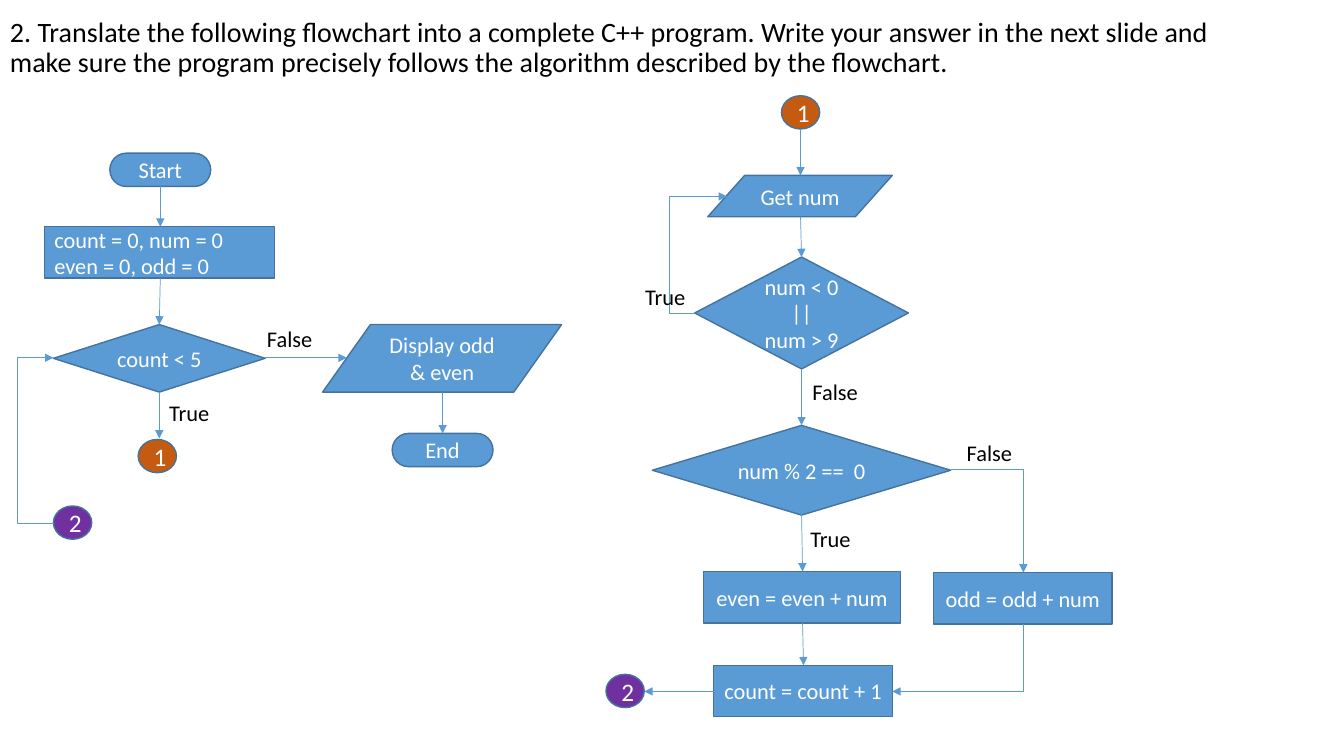
import dataclasses
import typing

import pptx
import pptx.dml.color
import pptx.enum.shapes
import pptx.enum.text
import pptx.oxml
import pptx.oxml.ns
import pptx.util

SHAPE = pptx.enum.shapes.MSO_SHAPE
CONNECTOR = pptx.enum.shapes.MSO_CONNECTOR
ALIGN = pptx.enum.text.PP_ALIGN
ANCHOR = pptx.enum.text.MSO_ANCHOR

SLIDE_WIDTH = pptx.util.Inches(13.33)
SLIDE_HEIGHT = pptx.util.Inches(7.5)
COLUMNS = 133.3
ROWS = 75
FONT = "Calibri"
COLORS = {
    "step": "5B9BD5",
    "outline": "43739E",
    "arrow": "5B9BD5",
    "orange": "C55A11",
    "purple": "7030A0",
    "black": "000000",
    "white": "FFFFFF",
}


@dataclasses.dataclass(frozen=True)
class Node:
    kind: SHAPE
    column: float
    row: float
    columns: float
    rows: float
    text: str
    fill: str = "step"
    size: float = 16
    align: ALIGN = ALIGN.CENTER


class Arrow(typing.NamedTuple):
    start: tuple[float, float]
    end: tuple[float, float]


class Elbow(typing.NamedTuple):
    start: tuple[float, float]
    end: tuple[float, float]
    turn: float | None = None


class Label(typing.NamedTuple):
    column: float
    row: float
    text: str


def circle(column: float, row: float, text: str, fill: str) -> Node:
    return Node(SHAPE.OVAL, column, row, 3.8, 3.3, text, fill, 18)


NODES = [
    Node(SHAPE.FLOWCHART_TERMINATOR, 10.9, 15.2, 10, 3.3, "Start"),
    Node(SHAPE.FLOWCHART_PROCESS, 4.4, 22.5, 22.8, 5.1,
         "count = 0, num = 0\neven = 0, odd = 0", align=ALIGN.LEFT),
    Node(SHAPE.FLOWCHART_DECISION, 5.3, 32.2, 21, 6.7, "count < 5"),
    Node(SHAPE.FLOWCHART_DATA, 32, 32.2, 23.7, 6.7, "Display odd & even"),
    Node(SHAPE.FLOWCHART_TERMINATOR, 38.9, 43, 10, 3.3, "End"),
    Node(SHAPE.FLOWCHART_DATA, 70.2, 17.4, 18.3, 4.1, "Get num"),
    Node(SHAPE.FLOWCHART_DECISION, 68.9, 25.5, 21.2, 11.1, "num < 0\n||\nnum > 9"),
    Node(SHAPE.FLOWCHART_DECISION, 64.7, 42.2, 29.6, 8.9, "num % 2 ==  0"),
    Node(SHAPE.FLOWCHART_PROCESS, 69.8, 56.7, 19.5, 5.1, "even = even + num"),
    Node(SHAPE.FLOWCHART_PROCESS, 92.6, 56.8, 17.7, 5.1, "odd = odd + num"),
    Node(SHAPE.FLOWCHART_PROCESS, 70.8, 66, 17.7, 5.1, "count = count + 1"),
    circle(77.5, 9.5, "1", "orange"),
    circle(13.7, 43.6, "1", "orange"),
    circle(5.3, 50.2, "2", "purple"),
    circle(60.1, 66.9, "2", "purple"),
]

ARROWS = [
    Arrow((15.9, 18.5), (15.9, 22.5)),
    Arrow((15.9, 27.6), (15.8, 32.2)),
    Arrow((15.8, 38.9), (15.8, 43.5)),
    Arrow((26.3, 35.5), (34.4, 35.5)),
    Arrow((43.9, 38.9), (43.9, 43)),
    Arrow((79.4, 12.8), (79.4, 17.4)),
    Arrow((79.4, 21.5), (79.5, 25.5)),
    Arrow((79.5, 36.6), (79.5, 42.2)),
    Arrow((79.5, 51), (79.6, 56.7)),
    Arrow((79.6, 61.8), (79.7, 66)),
    Arrow((70.8, 68.6), (63.9, 68.6)),
]

ELBOWS = [
    Elbow((5.4, 51.9), (5.3, 35.5), turn=1.7),
    Elbow((68.9, 31.1), (72.1, 19.5), turn=66.4),
    Elbow((94.3, 46.6), (101.5, 56.8)),
    Elbow((101.5, 61.9), (88.5, 68.6), turn=101.5),
]

LABELS = [
    Label(25.5, 31.8, "False"),
    Label(15.8, 39.1, "True"),
    Label(63, 27.6, "True"),
    Label(79.6, 37, "False"),
    Label(94.9, 43.1, "False"),
    Label(79.4, 51.6, "True"),
]


def across(columns: float) -> int:
    return round(SLIDE_WIDTH * columns / COLUMNS)


def down(rows: float) -> int:
    return round(SLIDE_HEIGHT * rows / ROWS)


def color(name: str) -> pptx.dml.color.RGBColor:
    return pptx.dml.color.RGBColor.from_string(COLORS[name])


def write_text(shape, text: str, *, size: float = 16, fill: str = "black",
               align: ALIGN = ALIGN.LEFT, anchor: ANCHOR = ANCHOR.MIDDLE,
               wrap: bool = True, spacing: float = 1.0) -> None:
    frame = shape.text_frame
    frame.text = text
    frame.word_wrap = wrap
    frame.vertical_anchor = anchor
    for paragraph in frame.paragraphs:
        paragraph.alignment = align
        paragraph.line_spacing = spacing
        for run in paragraph.runs:
            run.font.name = FONT
            run.font.size = pptx.util.Pt(size)
            run.font.color.rgb = color(fill)


def draw_node(slide, node: Node) -> None:
    shape = slide.shapes.add_shape(
        node.kind, across(node.column), down(node.row),
        across(node.columns), down(node.rows))
    shape.shadow.inherit = False
    shape.fill.solid()
    shape.fill.fore_color.rgb = color(node.fill)
    shape.line.color.rgb = color("outline")
    shape.line.width = pptx.util.Pt(1)
    write_text(shape, node.text, size=node.size, fill="white", align=node.align)


def draw_arrow(slide, arrow: Arrow | Elbow, kind: CONNECTOR = CONNECTOR.STRAIGHT):
    connector = slide.shapes.add_connector(
        kind, across(arrow.start[0]), down(arrow.start[1]),
        across(arrow.end[0]), down(arrow.end[1]))
    connector.line.color.rgb = color("arrow")
    connector.line.width = pptx.util.Pt(0.5)
    tail = pptx.oxml.ns.qn("a:tailEnd")
    connector.line._get_or_add_ln().makeelement(tail)
    line = connector.line._get_or_add_ln()
    line.append(line.makeelement(tail, {"type": "triangle"}))
    properties = connector._element.spPr
    properties.append(properties.makeelement(pptx.oxml.ns.qn("a:effectLst")))
    return connector


def draw_elbow(slide, elbow: Elbow) -> None:
    connector = draw_arrow(slide, elbow, CONNECTOR.ELBOW)
    geometry = connector._element.spPr.find(pptx.oxml.ns.qn("a:prstGeom"))
    if elbow.turn is None:
        geometry.set("prst", "bentConnector2")
        return
    share = (elbow.turn - elbow.start[0]) / (elbow.end[0] - elbow.start[0])
    adjustments = geometry.find(pptx.oxml.ns.qn("a:avLst"))
    adjustments.append(adjustments.makeelement(
        pptx.oxml.ns.qn("a:gd"),
        {"name": "adj1", "fmla": f"val {round(share * 100000)}"}))


def draw_label(slide, label: Label) -> None:
    columns = 6.1 if label.text == "True" else 6.6
    shape = slide.shapes.add_textbox(
        across(label.column), down(label.row), across(columns), down(3.7))
    write_text(shape, label.text, anchor=ANCHOR.TOP, wrap=False)


def main() -> None:
    presentation = pptx.Presentation()
    presentation.slide_width = SLIDE_WIDTH
    presentation.slide_height = SLIDE_HEIGHT
    slide = presentation.slides.add_slide(presentation.slide_layouts[6])
    title = slide.shapes.add_textbox(0, down(0.1), across(127.1), down(9.4))
    write_text(title, "2. Translate the following flowchart into a complete C++ program. "
               "Write your answer in the next slide and make sure the program precisely "
               "follows the algorithm described by the flowchart.", size=20, spacing=0.9)
    for node in NODES:
        draw_node(slide, node)
    for arrow in ARROWS:
        draw_arrow(slide, arrow)
    for elbow in ELBOWS:
        draw_elbow(slide, elbow)
    for label in LABELS:
        draw_label(slide, label)
    presentation.save("out.pptx")


if __name__ == "__main__":
    main()
